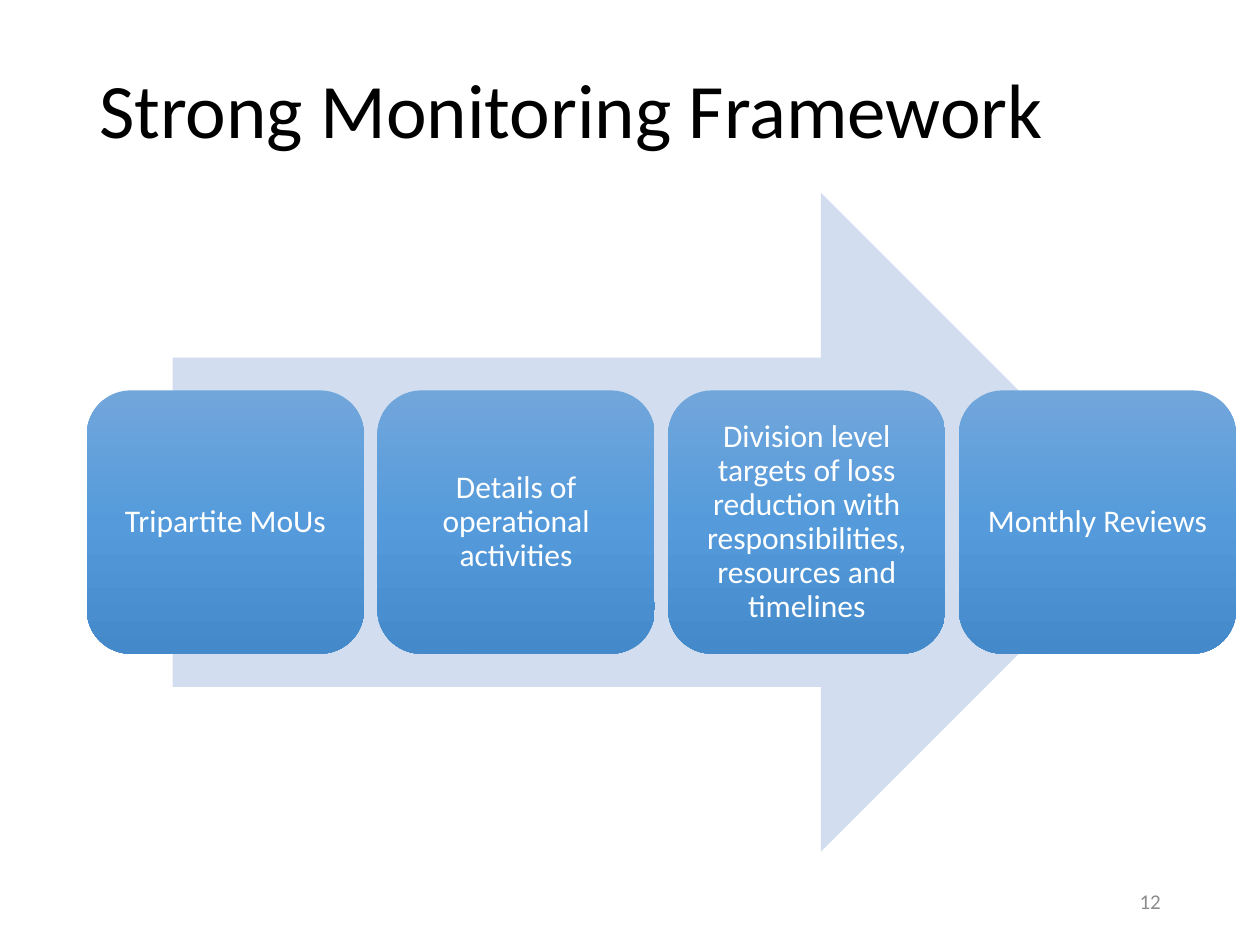
from copy import deepcopy
from dataclasses import dataclass

from pptx import Presentation
from pptx.dml.color import RGBColor
from pptx.enum.shapes import MSO_SHAPE
from pptx.enum.text import MSO_ANCHOR, PP_ALIGN
from pptx.oxml.ns import qn
from pptx.shapes.autoshape import Shape
from pptx.slide import Slide
from pptx.util import Cm, Pt

COLORS = {
    "title": "000000",
    "arrow": "D2DEEF",
    "top": "71A6DB",
    "middle": "559BDB",
    "bottom": "448ACA",
    "card": "FFFFFF",
    "number": "8C8C8C",
}
STEPS = [
    "Tripartite MoUs",
    "Details of operational activities",
    "Division level targets of loss reduction with responsibilities, "
    "resources and timelines",
    "Monthly Reviews",
]
LEFT, PITCH = 1.75, 5.86


@dataclass
class Box:
    left: float
    top: float
    width: float
    height: float

    def place(self) -> tuple[Cm, Cm, Cm, Cm]:
        return Cm(self.left), Cm(self.top), Cm(self.width), Cm(self.height)


@dataclass
class Style:
    color: str
    size: int
    align: PP_ALIGN
    spacing: float


TITLE = Style("title", 44, PP_ALIGN.LEFT, 0.9)
CARD = Style("card", 18, PP_ALIGN.CENTER, 0.9)
NUMBER = Style("number", 12, PP_ALIGN.RIGHT, 1.0)


def rgb(name: str) -> RGBColor:
    return RGBColor.from_string(COLORS[name])


def write(shape: Shape, text: str, style: Style) -> None:
    frame = shape.text_frame
    frame.word_wrap = True
    frame.vertical_anchor = MSO_ANCHOR.MIDDLE
    para = frame.paragraphs[0]
    para.text = text
    para.alignment = style.align
    para.line_spacing = style.spacing
    font = para.runs[0].font
    for name, value in {"name": "Calibri", "size": Pt(style.size)}.items():
        setattr(font, name, value)
    font.color.rgb = rgb(style.color)


def add_label(slide: Slide, box: Box, text: str, style: Style) -> None:
    write(slide.shapes.add_textbox(*box.place()), text, style)


def add_form(slide: Slide, kind: MSO_SHAPE, box: Box) -> Shape:
    """Add a preset shape without line or shadow."""
    shape = slide.shapes.add_shape(kind, *box.place())
    shape.shadow.inherit = False
    shape.line.fill.background()
    return shape


def shade(shape: Shape) -> None:
    """Fill from top to bottom through three colours."""
    fill = shape.fill
    fill.gradient()
    fill.gradient_angle = 270
    stops = shape._element.spPr.find(qn("a:gradFill")).find(qn("a:gsLst"))
    stops.insert(1, deepcopy(stops[0]))
    for stop, name, place in zip(
        fill.gradient_stops, ("top", "middle", "bottom"), (0, 0.5, 1)
    ):
        stop.color.rgb = rgb(name)
        stop.position = place


def add_card(slide: Slide, box: Box, text: str) -> None:
    card = add_form(slide, MSO_SHAPE.ROUNDED_RECTANGLE, box)
    shade(card)
    for side in ("left", "top", "right", "bottom"):
        setattr(card.text_frame, f"margin_{side}", Cm(0.18))
    write(card, text, CARD)


def main() -> None:
    deck = Presentation()
    deck.slide_width, deck.slide_height = Cm(25.4), Cm(19.05)
    slide = deck.slides.add_slide(deck.slide_layouts[6])

    add_label(slide, Box(LEFT, 1.02, 21.9, 2.54),
              "Strong Monitoring Framework", TITLE)
    arrow = add_form(slide, MSO_SHAPE.RIGHT_ARROW,
                     Box(3.48, 3.89, 19.71, 13.28))
    arrow.fill.solid()
    arrow.fill.fore_color.rgb = rgb("arrow")
    for index, text in enumerate(STEPS):
        add_card(slide, Box(LEFT + index * PITCH, 7.87, 5.59, 5.31), text)
    add_label(slide, Box(17.93, 17.65, 5.72, 1.02), "12", NUMBER)

    deck.save("out.pptx")


if __name__ == "__main__":
    main()
